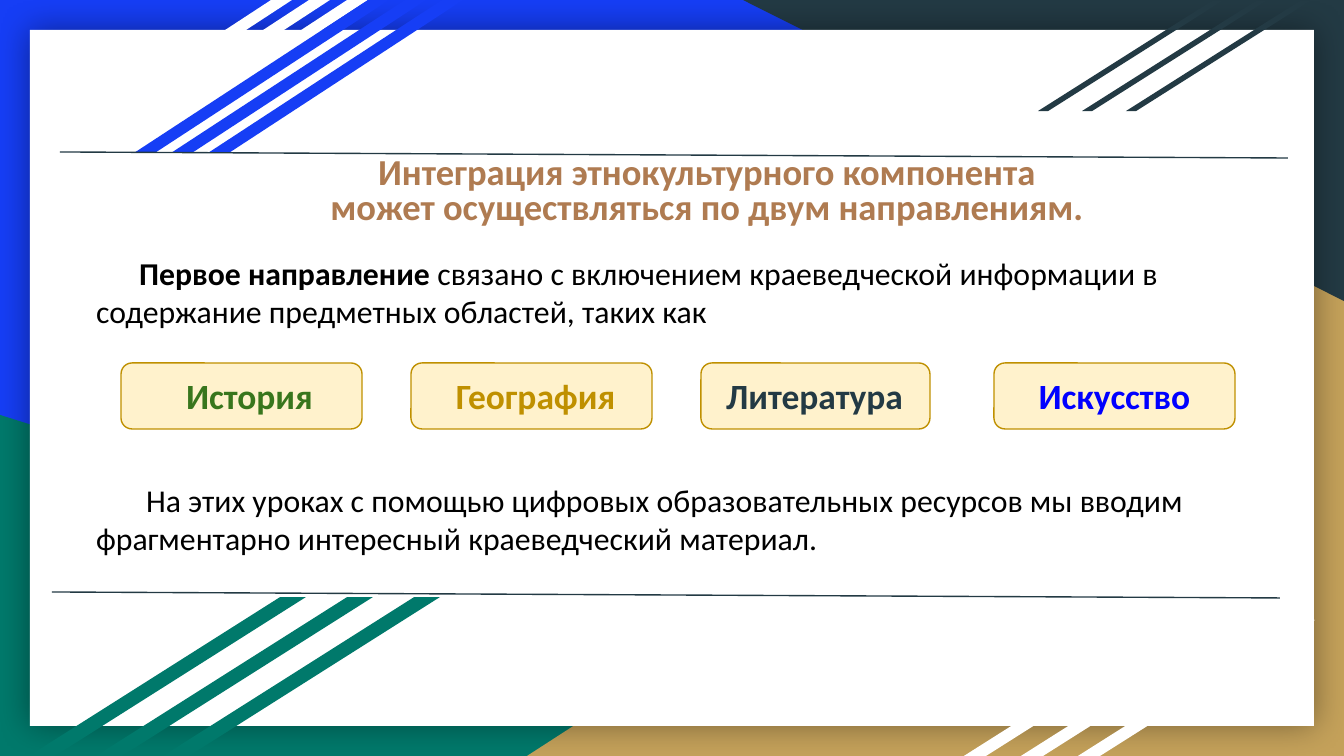
from typing import NamedTuple

from lxml.etree import SubElement
from pptx import Presentation
from pptx.dml.color import RGBColor
from pptx.enum.shapes import MSO_CONNECTOR, MSO_SHAPE
from pptx.enum.text import MSO_AUTO_SIZE, PP_ALIGN
from pptx.oxml.ns import qn
from pptx.util import Pt

SCALE = 914400 / 134.4
FONT = "Calibri"
BLUE = RGBColor(0x16, 0x3E, 0xF5)
GREEN = RGBColor(0x00, 0x79, 0x6B)
TAN = RGBColor(0xC4, 0xA1, 0x5A)
DARK = RGBColor(0x23, 0x3A, 0x44)
WHITE = RGBColor(0xFF, 0xFF, 0xFF)
BLACK = RGBColor(0x00, 0x00, 0x00)
BROWN = RGBColor(0xAF, 0x7B, 0x51)
CREAM = RGBColor(0xFF, 0xF2, 0xCC)
GOLD = RGBColor(0xBF, 0x90, 0x00)
LEAF = RGBColor(0x38, 0x76, 0x1D)
BRIGHT = RGBColor(0x00, 0x00, 0xFF)


class Box(NamedTuple):
    x: int
    y: int
    w: int
    h: int


class Stripes(NamedTuple):
    last: Box
    step: int
    slant: float
    color: RGBColor


class Card(NamedTuple):
    x: int
    w: int
    label: int
    text: str
    color: RGBColor


class Run(NamedTuple):
    text: str
    bold: bool = False


STRIPES = [
    Stripes(Box(113, 0, 255, 153), 38, 1.53, WHITE),
    Stripes(Box(208, 0, 255, 153), 37, 1.53, BLUE),
    Stripes(Box(1126, 1, 184, 110), 44, 1.58, DARK),
    Stripes(Box(1078, 620, 237, 136), 57, 1.58, WHITE),
    Stripes(Box(163, 597, 277, 159), 67, 1.58, GREEN),
]
CARDS = [
    Card(121, 241, 129, "История", LEAF),
    Card(411, 241, 415, "География", GOLD),
    Card(701, 229, 694, "Литература", DARK),
    Card(994, 241, 994, "Искусство", BRIGHT),
]


def px(value: int) -> int:
    return round(value * SCALE)


def draw(slide, kind, box: Box, color: RGBColor):
    shape = slide.shapes.add_shape(kind, *map(px, box))
    shape.shadow.inherit = False
    shape.fill.solid()
    shape.fill.fore_color.rgb = color
    shape.line.fill.background()
    return shape


def shade(shape) -> None:
    effects = shape._element.spPr.find(qn("a:effectLst"))
    outer = SubElement(effects, qn("a:outerShdw"), blurRad=str(Pt(18)), dist="0",
                       algn="ctr", rotWithShape="0")
    black = SubElement(outer, qn("a:srgbClr"), val="000000")
    SubElement(black, qn("a:alpha"), val="40000")


def band(slide, group: Stripes) -> None:
    for i in range(3):
        box = group.last._replace(x=group.last.x - i * group.step)
        shape = draw(slide, MSO_SHAPE.PARALLELOGRAM, box, group.color)
        shape.adjustments[0] = group.slant


def write(slide, box: Box, runs: list[Run], size: float, color: RGBColor,
          indent: int = 0, align=PP_ALIGN.LEFT, fit=MSO_AUTO_SIZE.SHAPE_TO_FIT_TEXT):
    frame = slide.shapes.add_textbox(*map(px, box)).text_frame
    frame.word_wrap = True
    frame.auto_size = fit
    frame.margin_left = frame.margin_right = px(13)
    frame.margin_top = frame.margin_bottom = px(13)
    para = frame.paragraphs[0]
    para.alignment = align
    if indent:
        para._p.get_or_add_pPr().set("indent", str(px(indent)))
    para.font.name = FONT
    para.font.size = Pt(size)
    para.font.color.rgb = color
    for part in runs:
        run = para.add_run()
        run.text = part.text
        run.font.bold = part.bold
    return para


def rule(slide, x: int, y: int) -> None:
    line = slide.shapes.add_connector(
        MSO_CONNECTOR.STRAIGHT, px(x), px(y), px(x + 1228), px(y + 6))
    line.line.color.rgb = DARK
    line.line.width = Pt(0.75)
    SubElement(line._element.spPr, qn("a:effectLst"))


def main() -> None:
    deck = Presentation()
    deck.slide_width, deck.slide_height = px(1344), px(756)
    slide = deck.slides.add_slide(deck.slide_layouts[6])
    slide.background.fill.solid()
    slide.background.fill.fore_color.rgb = BLUE

    draw(slide, MSO_SHAPE.RIGHT_TRIANGLE, Box(0, 415, 1083, 341), GREEN)
    right = draw(slide, MSO_SHAPE.RIGHT_TRIANGLE, Box(527, 228, 817, 528), TAN)
    right._element.spPr.xfrm.set("flipH", "1")
    top = draw(slide, MSO_SHAPE.RIGHT_TRIANGLE, Box(743, 0, 601, 301), DARK)
    top.rotation = 180
    shade(draw(slide, MSO_SHAPE.RECTANGLE, Box(30, 30, 1284, 696), WHITE))
    for group in STRIPES:
        band(slide, group)

    title = write(
        slide, Box(313, 144, 788, 77),
        [Run("Интеграция этнокультурного компонента может осуществляться "
             "по двум направлениям.", True)],
        19.6, BROWN, align=PP_ALIGN.CENTER, fit=MSO_AUTO_SIZE.NONE)
    title.line_spacing = 0.8
    write(slide, Box(83, 241, 1198, 103),
          [Run("Первое направление", True),
           Run(" связано с включением краеведческой информации в содержание "
               "предметных областей, таких как")],
          17, BLACK, indent=43)

    for card in CARDS:
        shape = draw(slide, MSO_SHAPE.ROUNDED_RECTANGLE,
                     Box(card.x, 363, card.w, 66), CREAM)
        shape.line.color.rgb = GOLD
        shape.line.width = Pt(0.75)
        write(slide, Box(card.label, 361, 241, 70), [Run(card.text, True)],
              19, card.color, align=PP_ALIGN.CENTER)

    write(slide, Box(83, 468, 1152, 103),
          [Run("На этих уроках с помощью цифровых образовательных ресурсов мы "
               "вводим фрагментарно интересный краеведческий материал.")],
          17, BLACK, indent=50)
    rule(slide, 60, 152)
    rule(slide, 52, 592)
    deck.save("out.pptx")


if __name__ == "__main__":
    main()
